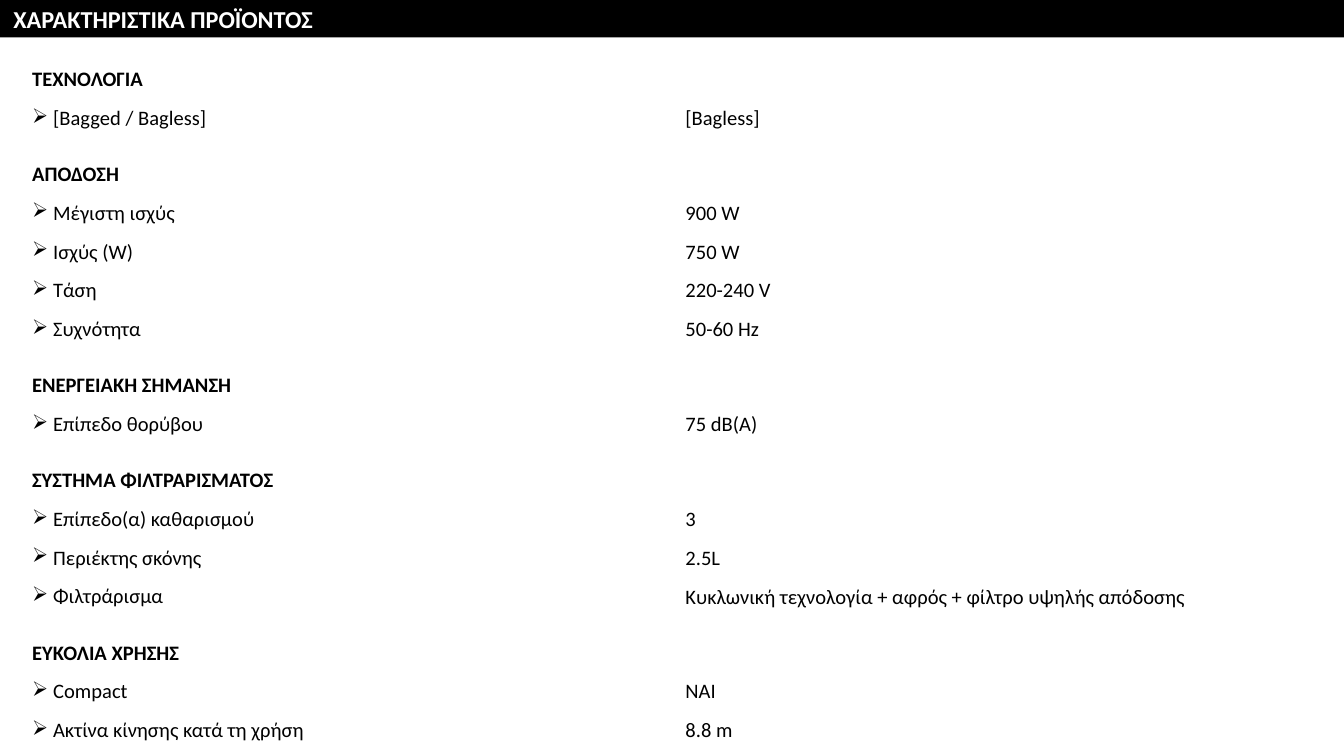
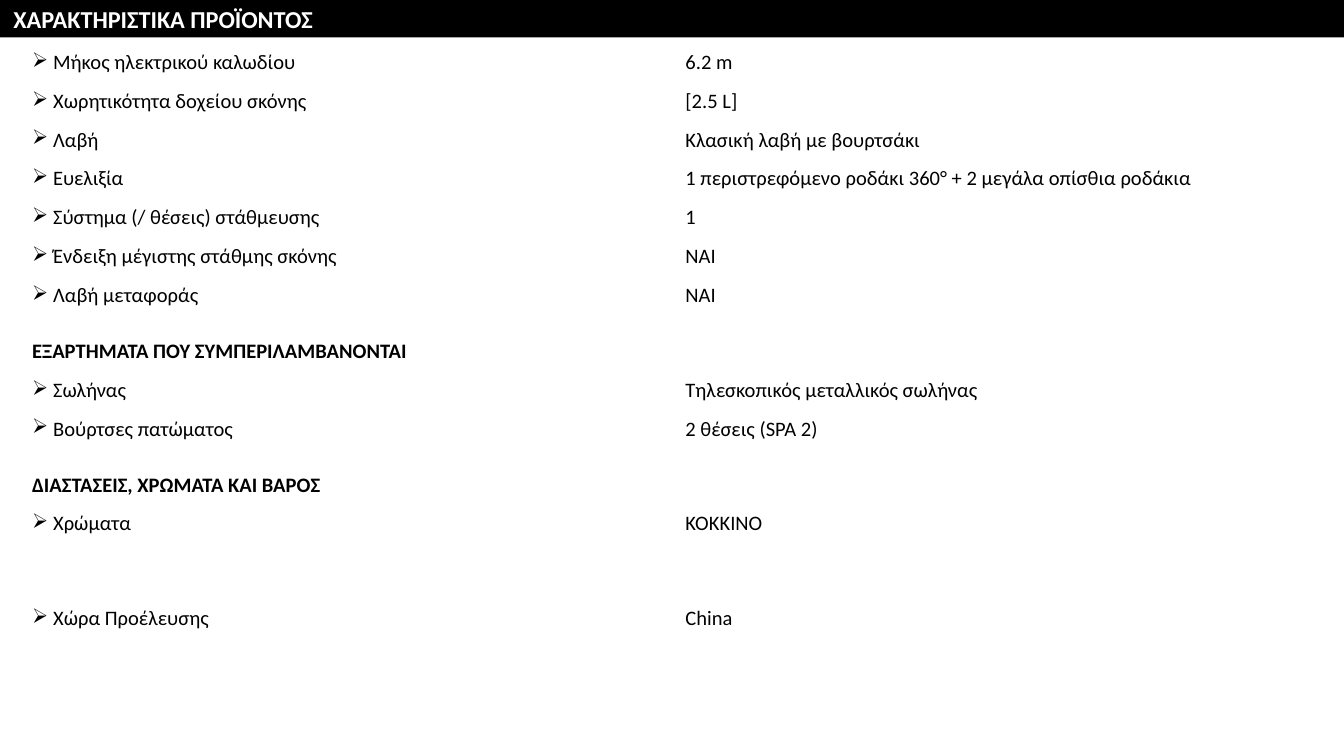
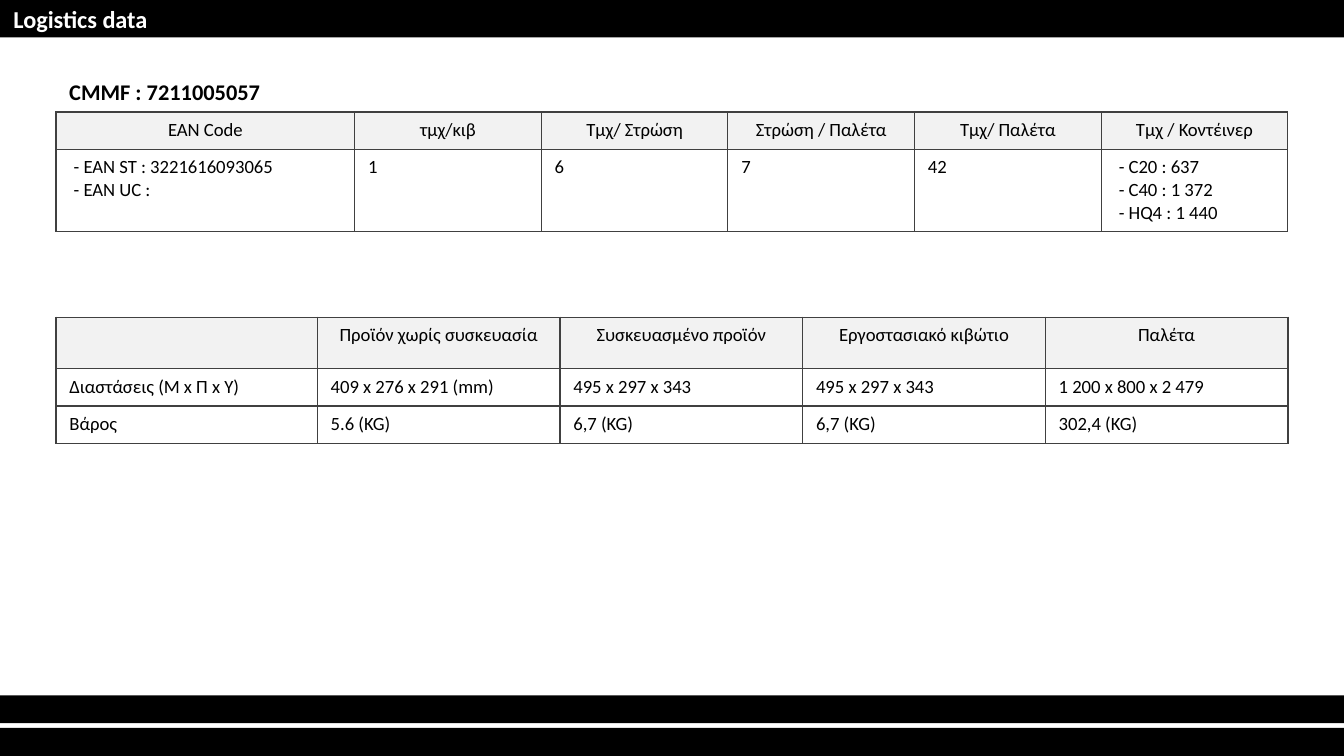
from copy import deepcopy

from lxml import etree
from pptx import Presentation
from pptx import util as u
from pptx.dml.color import RGBColor
from pptx.enum import shapes, text
from pptx.oxml.ns import qn

COLORS = {"band": "000000", "ink": "000000", "paper": "FFFFFF",
          "header": "F2F2F2", "border": "404040"}
FONT = "Calibri"
COLUMNS, ROWS = 72, 40.5          # square grid over a 10 x 5.625 inch slide
UNIT = u.Inches(10) / COLUMNS
CENTER, LEFT = text.PP_ALIGN.CENTER, text.PP_ALIGN.LEFT
TOP, MIDDLE, BOTTOM = (text.MSO_ANCHOR.TOP, text.MSO_ANCHOR.MIDDLE,
                       text.MSO_ANCHOR.BOTTOM)


def grid(*lengths):
    return [u.Emu(round(length * UNIT)) for length in lengths]


def rgb(name):
    return RGBColor.from_string(COLORS[name])


def write(frame, words, size=11, color="ink", bold=False, align=LEFT, bullet=None):
    """Put words in a text frame; a line feed becomes a line break."""
    paragraph = frame.paragraphs[0]
    paragraph.text = words
    paragraph.alignment = align
    for run in paragraph.runs:
        run.font.name, run.font.size, run.font.bold = FONT, u.Pt(size), bold
        run.font.color.rgb = rgb(color)
    for line_break in paragraph._p.findall(qn("a:br")):
        line_break.append(deepcopy(paragraph.runs[0]._r.rPr))
    if not words:
        etree.SubElement(paragraph._p, qn("a:endParaRPr"), sz=str(size * 100))
    if bullet:
        properties = paragraph._p.get_or_add_pPr()
        properties.set("marL", "0")
        properties.set("indent", "0")
        etree.SubElement(properties, qn("a:buChar"), char=bullet)


class Sheet:
    """Deck style together with the slide being filled."""

    def __init__(self):
        self.deck = Presentation()
        self.deck.slide_width, self.deck.slide_height = grid(COLUMNS, ROWS)
        self.slide = None

    def start(self, heading):
        self.slide = self.deck.slides.add_slide(self.deck.slide_layouts[5])
        title = self.slide.shapes.title
        title.left, title.top, title.width, title.height = grid(0, 0, COLUMNS, 2)
        title.fill.solid()
        title.fill.fore_color.rgb = rgb("band")
        title.text_frame.auto_size = text.MSO_AUTO_SIZE.NONE
        title.text_frame.vertical_anchor = MIDDLE
        write(title.text_frame, heading, size=13, color="paper", bold=True)

    def box(self, left, top, width, height, fill):
        panel = self.slide.shapes.add_shape(
            shapes.MSO_SHAPE.RECTANGLE, *grid(left, top, width, height))
        panel.shadow.inherit = False
        panel.fill.solid()
        panel.fill.fore_color.rgb = rgb(fill)
        panel.line.fill.background()
        return panel

    def label(self, left, top, width, height, words):
        frame = self.box(left, top, width, height, "paper").text_frame
        frame.word_wrap = True
        frame.vertical_anchor = BOTTOM
        write(frame, words, size=12, bold=True)

    def table(self, left, top, widths, heights):
        table = self.slide.shapes.add_table(
            len(heights), len(widths),
            *grid(left, top, sum(widths), sum(heights))).table
        table.first_row = table.horz_banding = False
        for column, width in zip(table.columns, grid(*widths)):
            column.width = width
        for row, height in zip(table.rows, grid(*heights)):
            row.height = height
        return table

    def cell(self, cell, words, anchor=TOP, fill=None, border=False, **style):
        if border:
            for side in ("lnL", "lnR", "lnT", "lnB"):
                line = etree.SubElement(cell._tc.get_or_add_tcPr(),
                                        qn(f"a:{side}"), w=str(u.Pt(0.75)))
                paint = etree.SubElement(line, qn("a:solidFill"))
                etree.SubElement(paint, qn("a:srgbClr"), val=COLORS["border"])
        if fill:
            cell.fill.solid()
            cell.fill.fore_color.rgb = rgb(fill)
        else:
            cell.fill.background()
        cell.vertical_anchor = anchor
        write(cell.text_frame, words, **style)

    def features(self, entries):
        """A pair is a feature with its value; a lone string heads a section."""
        heights = [3 if isinstance(entry, str) else 2 for entry in entries]
        table = self.table(1, 2.3, [35, 35], heights)
        for row, entry in enumerate(entries):
            name, value = table.cell(row, 0), table.cell(row, 1)
            if isinstance(entry, str):
                name.merge(value)
                self.cell(name, entry, anchor=BOTTOM, bold=True)
            else:
                self.cell(name, " " + entry[0], bullet="➢")
                self.cell(value, entry[1], anchor=MIDDLE)

    def ruled(self, top, widths, heights, rows):
        table = self.table(3, top, widths, heights)
        for r, row in enumerate(rows):
            look = {"fill": "header", "align": CENTER} if r == 0 else {}
            for c, words in enumerate(row):
                self.cell(table.cell(r, c), words, size=10, border=True, **look)


PRODUCT_TITLE = "ΧΑΡΑΚΤΗΡΙΣΤΙΚΑ ΠΡΟΪΟΝΤΟΣ"
PRODUCT_PAGES = [
    [
        "ΤΕΧΝΟΛΟΓΙΑ",
        ("[Bagged / Bagless]", "[Bagless]"),
        "ΑΠΟΔΟΣΗ",
        ("Μέγιστη ισχύς", "900 W"),
        ("Ισχύς (W)", "750 W"),
        ("Τάση", "220-240 V"),
        ("Συχνότητα", "50-60 Hz"),
        "ΕΝΕΡΓΕΙΑΚΗ ΣΗΜΑΝΣΗ",
        ("Επίπεδο θορύβου", "75 dB(A)"),
        "ΣΥΣΤΗΜΑ ΦΙΛΤΡΑΡΙΣΜΑΤΟΣ",
        ("Επίπεδο(α) καθαρισμού", "3"),
        ("Περιέκτης σκόνης", "2.5L"),
        ("Φιλτράρισμα", "Κυκλωνική τεχνολογία + αφρός + φίλτρο υψηλής απόδοσης"),
        "ΕΥΚΟΛΙΑ ΧΡΗΣΗΣ",
        ("Compact", "ΝΑΙ"),
        ("Ακτίνα κίνησης κατά τη χρήση", "8.8 m"),
    ],
    [
        ("Μήκος ηλεκτρικού καλωδίου", "6.2 m"),
        ("Χωρητικότητα δοχείου σκόνης", "[2.5 L]"),
        ("Λαβή", "Κλασική λαβή με βουρτσάκι"),
        ("Ευελιξία", "1 περιστρεφόμενο ροδάκι 360° + 2 μεγάλα οπίσθια ροδάκια"),
        ("Σύστημα (/ θέσεις) στάθμευσης", "1"),
        ("Ένδειξη μέγιστης στάθμης σκόνης", "ΝΑΙ"),
        ("Λαβή μεταφοράς", "ΝΑΙ"),
        "ΕΞΑΡΤΗΜΑΤΑ ΠΟΥ ΣΥΜΠΕΡΙΛΑΜΒΑΝΟΝΤΑΙ",
        ("Σωλήνας", "Τηλεσκοπικός μεταλλικός σωλήνας"),
        ("Βούρτσες πατώματος", "2 θέσεις (SPA 2)"),
        "ΔΙΑΣΤΑΣΕΙΣ, ΧΡΩΜΑΤΑ ΚΑΙ ΒΑΡΟΣ",
        ("Χρώματα", "ΚΟΚΚΙΝΟ"),
        "",
        ("Χώρα Προέλευσης", "China"),
    ],
]
PACKING = [
    ["EAN Code", "τμχ/κιβ", "Τμχ/ Στρώση", "Στρώση / Παλέτα", "Τμχ/ Παλέτα",
     "Τμχ / Κοντέινερ"],
    [" - EAN ST : 3221616093065\n - EAN UC :", "1", "6", "7", "42",
     " - C20 : 637\n - C40 : 1 372\n - HQ4 : 1 440"],
]
MEASURES = [
    ["", "Προϊόν χωρίς συσκευασία", "Συσκευασμένο προϊόν",
     "Εργοστασιακό κιβώτιο", "Παλέτα"],
    ["Διαστάσεις (Μ x Π x Υ)", "409 x 276 x 291 (mm)", "495 x 297 x 343",
     "495 x 297 x 343", "1 200 x 800 x 2 479"],
    ["Βάρος", "5.6 (KG)", "6,7 (KG)", "6,7 (KG)", "302,4 (KG)"],
]


def main():
    sheet = Sheet()

    # Product features
    for entries in PRODUCT_PAGES:
        sheet.start(PRODUCT_TITLE)
        sheet.features(entries)

    # Logistics
    sheet.start("Logistics data")
    sheet.label(3, 3, 66, 3, "CMMF : 7211005057")
    sheet.ruled(6, [16] + [10] * 5, [2, 4.4], PACKING)
    sheet.ruled(17, [14] + [13] * 4, [2.75, 2, 2], MEASURES)

    # Closing bands
    for top in (37.25, 39):
        sheet.box(0, top, COLUMNS, 1.5, "band")

    sheet.deck.save("out.pptx")


if __name__ == "__main__":
    main()
